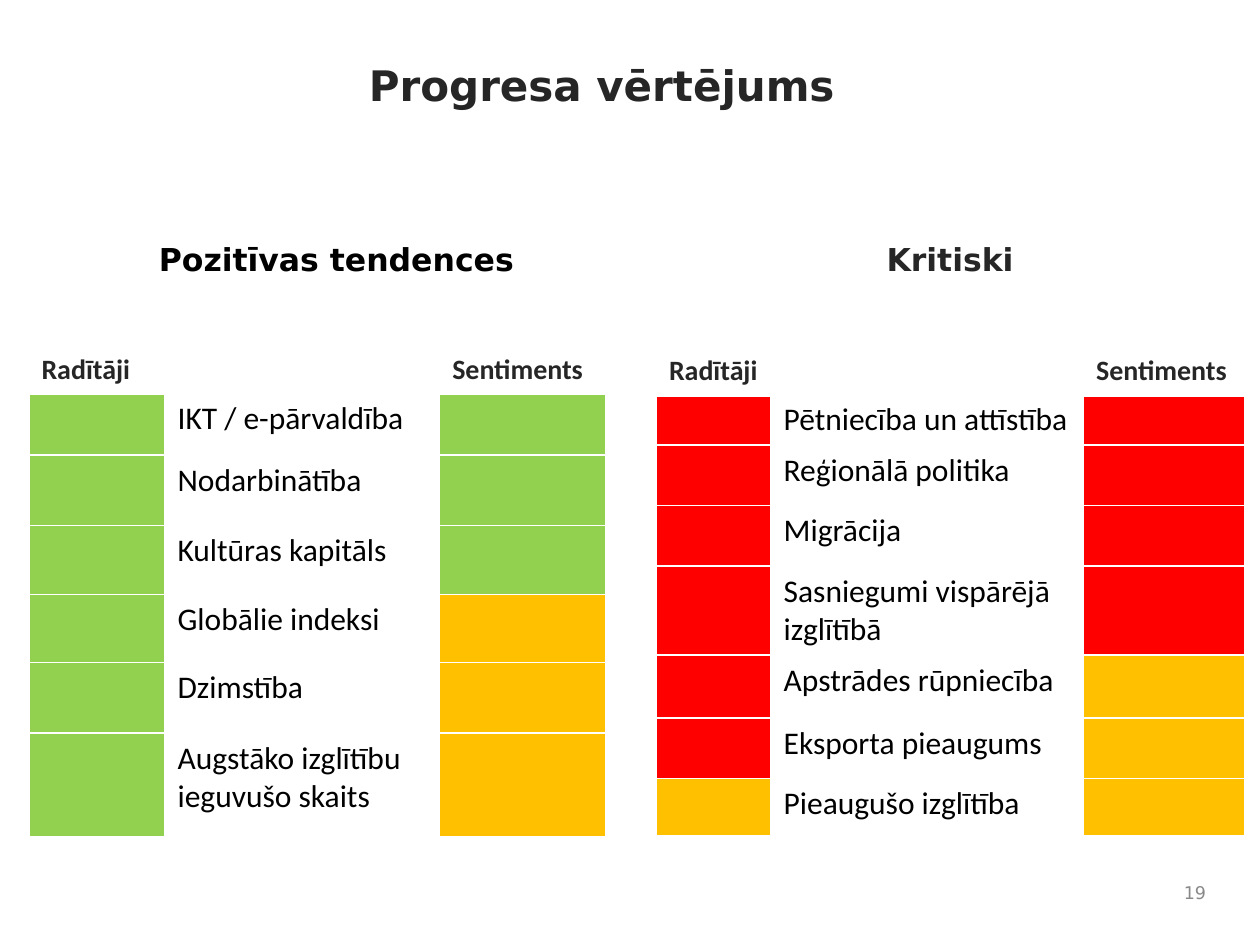
import pptx
import pptx.util
import pptx.dml.color
import pptx.enum.text
from dataclasses import dataclass
from lxml import etree

ALIGN = pptx.enum.text.PP_ALIGN
ANCHOR = pptx.enum.text.MSO_ANCHOR


@dataclass(frozen=True)
class Theme:
    head: str = "DejaVu Sans"
    body: str = "Calibri"
    dark: str = "262626"
    black: str = "000000"
    gray: str = "898989"
    white: str = "FFFFFF"
    green: str = "92D050"
    amber: str = "FFC000"
    red: str = "FF0000"
    title: int = 24
    large: int = 18
    label: int = 16
    small: int = 10
    thin: int = 1
    thick: int = 3


def rgb(code):
    return pptx.dml.color.RGBColor.from_string(code)


def write(frame, text, font, size, color, bold=False, align=ALIGN.LEFT):
    para = frame.paragraphs[0]
    para.alignment = align
    run = para.add_run()
    run.text = text
    run.font.name = font
    run.font.size = pptx.util.Pt(size)
    run.font.bold = bold
    run.font.color.rgb = rgb(color)


class Page:
    """Current slide on a grid of 100 columns by 75 rows."""

    def __init__(self, deck, theme):
        self.theme = theme
        self.slide = deck.slides.add_slide(deck.slide_layouts[6])
        self.unit = deck.slide_width / 100

    def span(self, count):
        return pptx.util.Emu(round(count * self.unit))

    def text(self, box, text, anchor=ANCHOR.TOP, **style):
        shape = self.slide.shapes.add_textbox(*map(self.span, box))
        frame = shape.text_frame
        frame.word_wrap = True
        frame.vertical_anchor = anchor
        write(frame, text, **style)

    def edge(self, cell, top, base):
        props = cell._tc.get_or_add_tcPr()
        thin = self.theme.thin
        for side, width in zip("LRTB", (thin, thin, top, base)):
            line = etree.SubElement(props, pptx.oxml.ns.qn("a:ln" + side),
                                    w=str(pptx.util.Pt(width)))
            fill = etree.SubElement(line, pptx.oxml.ns.qn("a:solidFill"))
            etree.SubElement(fill, pptx.oxml.ns.qn("a:srgbClr"),
                             val=self.theme.white)

    def table(self, left, top, cols, rows, items):
        """Header row, then (left colour, name, right colour) per row."""
        look = self.theme
        box = map(self.span, (left, top, sum(cols), sum(rows)))
        grid = self.slide.shapes.add_table(len(rows), len(cols), *box).table
        grid.first_row = grid.horz_banding = False
        for col, width in zip(grid.columns, cols):
            col.width = self.span(width)
        for row, height in zip(grid.rows, rows):
            row.height = self.span(height)

        # Borders, thicker under the header
        for num, row in enumerate(grid.rows):
            for cell in row.cells:
                self.edge(cell, look.thick if num == 1 else look.thin,
                          look.thick if num == 0 else look.thin)
                cell.fill.background()

        # Header labels
        for col, label in ((0, "Radītāji"), (2, "Sentiments")):
            cell = grid.cell(0, col)
            cell.vertical_anchor = ANCHOR.BOTTOM
            write(cell.text_frame, label, look.body, look.label, look.dark, True)

        # Colour marks and names
        for num, (mark, name, mood) in enumerate(items, 1):
            for col, color in ((0, mark), (2, mood)):
                fill = grid.cell(num, col).fill
                fill.solid()
                fill.fore_color.rgb = rgb(color)
            write(grid.cell(num, 1).text_frame, name,
                  look.body, look.large, look.black)


def main():
    deck = pptx.Presentation()
    deck.slide_width = pptx.util.Inches(10)
    deck.slide_height = pptx.util.Inches(7.5)
    look = Theme()
    page = Page(deck, look)
    green, amber, red = look.green, look.amber, look.red

    # Title and slide number
    page.text((28.3, 4.2, 66.7, 11.3), "Progresa vērtējums",
              font=look.head, size=look.title, color=look.dark, bold=True)
    page.text((92, 69.2, 4.7, 3.3), "19", anchor=ANCHOR.MIDDLE,
              font=look.head, size=look.small, color=look.gray,
              align=ALIGN.RIGHT)

    # Positive trends
    page.table(2.3, 19.5, (10.8, 21.8, 13.2),
               (11.7, 4.9, 5.6, 5.5, 5.4, 5.6, 8.2), (
                   (green, "IKT / e-pārvaldība", green),
                   (green, "Nodarbinātība", green),
                   (green, "Kultūras kapitāls", green),
                   (green, "Globālie indeksi", amber),
                   (green, "Dzimstība", amber),
                   (green, "Augstāko izglītību ieguvušo skaits", amber)))

    # Critical areas
    page.table(52.1, 24.3, (9.1, 24.8, 12.8),
               (7, 4, 4.8, 4.8, 7.1, 5, 4.8, 4.5), (
                   (red, "Pētniecība un attīstība", red),
                   (red, "Reģionālā politika", red),
                   (red, "Migrācija", red),
                   (red, "Sasniegumi vispārējā izglītībā", red),
                   (red, "Apstrādes rūpniecība", amber),
                   (red, "Eksporta pieaugums", amber),
                   (amber, "Pieaugušo izglītība", amber)))

    # Headings over the tables
    for left, name, color in ((4.6, "Pozitīvas tendences", look.black),
                              (53.3, "Kritiski", look.dark)):
        page.text((left, 18.6, 44.2, 7), name, font=look.head,
                  size=look.large, color=color, bold=True,
                  align=ALIGN.CENTER)

    deck.save("out.pptx")


if __name__ == "__main__":
    main()
